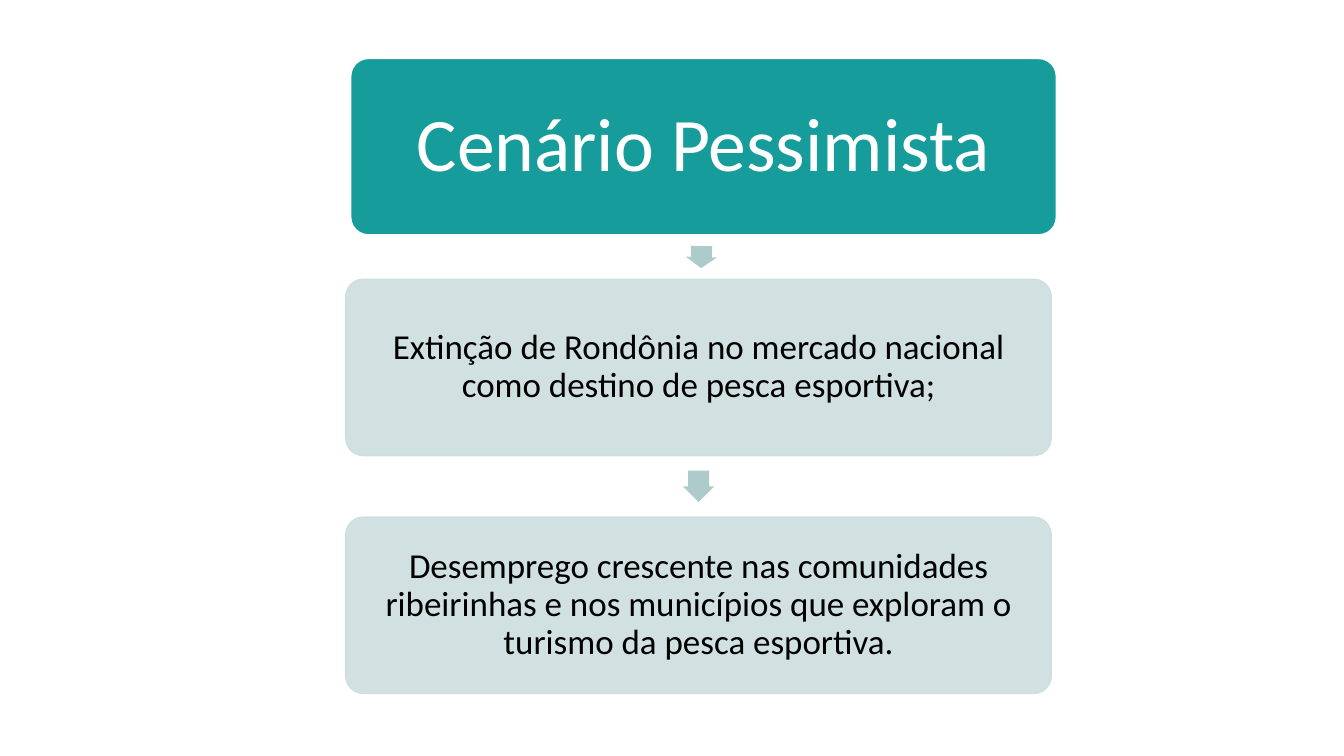
from lxml import etree
from pptx import Presentation
from pptx.dml.color import RGBColor
from pptx.enum import shapes, text
from pptx.oxml.ns import qn
from pptx.util import Pt

TEAL = RGBColor(0x16, 0x9C, 0x9A)
PALE = RGBColor(0xCC, 0xDE, 0xDE)
ARROW = RGBColor(0xAC, 0xCB, 0xCA)
WHITE = RGBColor(255, 255, 255)
BLACK = RGBColor(0, 0, 0)

CARD_WIDTH, CARD_HEIGHT = 504, 126
ARROW_WIDTH = 22.32

TITLE = "Cenário Pessimista"
EXTINCTION = "Extinção de Rondônia no mercado nacional como destino de pesca esportiva;"
UNEMPLOYMENT = ("Desemprego crescente nas comunidades ribeirinhas e nos municípios "
                "que exploram o turismo da pesca esportiva.")


def set_opacity(fill, percent):
    """Make a solid fill, of a shape or of its line, partly transparent."""
    color = fill._xPr.find(qn("a:solidFill"))[0]
    etree.SubElement(color, qn("a:alpha")).set("val", str(percent * 1000))


def add_card(page, left, top, words, size, ink, fill, line, inset, opacity=100):
    card = page.shapes.add_shape(shapes.MSO_SHAPE.ROUNDED_RECTANGLE, Pt(left), Pt(top),
                                 Pt(CARD_WIDTH), Pt(CARD_HEIGHT))
    card.adjustments[0] = 0.1
    card.shadow.inherit = False
    card.fill.solid()
    card.fill.fore_color.rgb = fill
    card.line.color.rgb = line
    card.line.width = Pt(1)
    if opacity < 100:
        set_opacity(card.fill, opacity)
        set_opacity(card.line.fill, opacity)

    frame = card.text_frame
    frame.text = words
    frame.word_wrap = True
    frame.vertical_anchor = text.MSO_ANCHOR.MIDDLE
    frame.margin_left = frame.margin_right = Pt(inset)
    frame.margin_top = frame.margin_bottom = Pt(inset)
    para = frame.paragraphs[0]
    para.alignment = text.PP_ALIGN.CENTER
    para.line_spacing = 0.9
    span = para.runs[0]
    span.font.name = "Calibri"
    span.font.size = Pt(size)
    span.font.color.rgb = ink


def add_arrow(page, center, middle, length, turn):
    """Add an arrow that is centred on a point and turned to point down."""
    arrow = page.shapes.add_shape(shapes.MSO_SHAPE.RIGHT_ARROW,
                                  Pt(center - length / 2), Pt(middle - ARROW_WIDTH / 2),
                                  Pt(length), Pt(ARROW_WIDTH))
    arrow.adjustments[0] = 0.67
    arrow.adjustments[1] = 0.5
    arrow.rotation = turn
    arrow.shadow.inherit = False
    arrow.fill.solid()
    arrow.fill.fore_color.rgb = ARROW
    arrow.line.fill.background()


def add_scenario(page, left, top):
    """Stack the title and its two consequences, joined by arrows."""
    first, second = top + 157.68, top + 327.6
    center = left + CARD_WIDTH / 2
    add_card(page, left + 3.6, top, TITLE, 54, WHITE, TEAL, WHITE, 9)
    add_arrow(page, center + 2, (top + CARD_HEIGHT + first) / 2, 15.84, 91.3)
    add_card(page, left, first, EXTINCTION, 25, BLACK, PALE, PALE, 6, 90)
    add_arrow(page, center, (first + CARD_HEIGHT + second) / 2, ARROW_WIDTH, 90)
    add_card(page, left, second, UNEMPLOYMENT, 25, BLACK, PALE, PALE, 6, 90)


def main():
    deck = Presentation()
    deck.slide_width, deck.slide_height = Pt(960), Pt(540)
    page = deck.slides.add_slide(deck.slide_layouts[6])
    add_scenario(page, 246.96, 41.76)
    deck.save("out.pptx")


if __name__ == "__main__":
    main()
